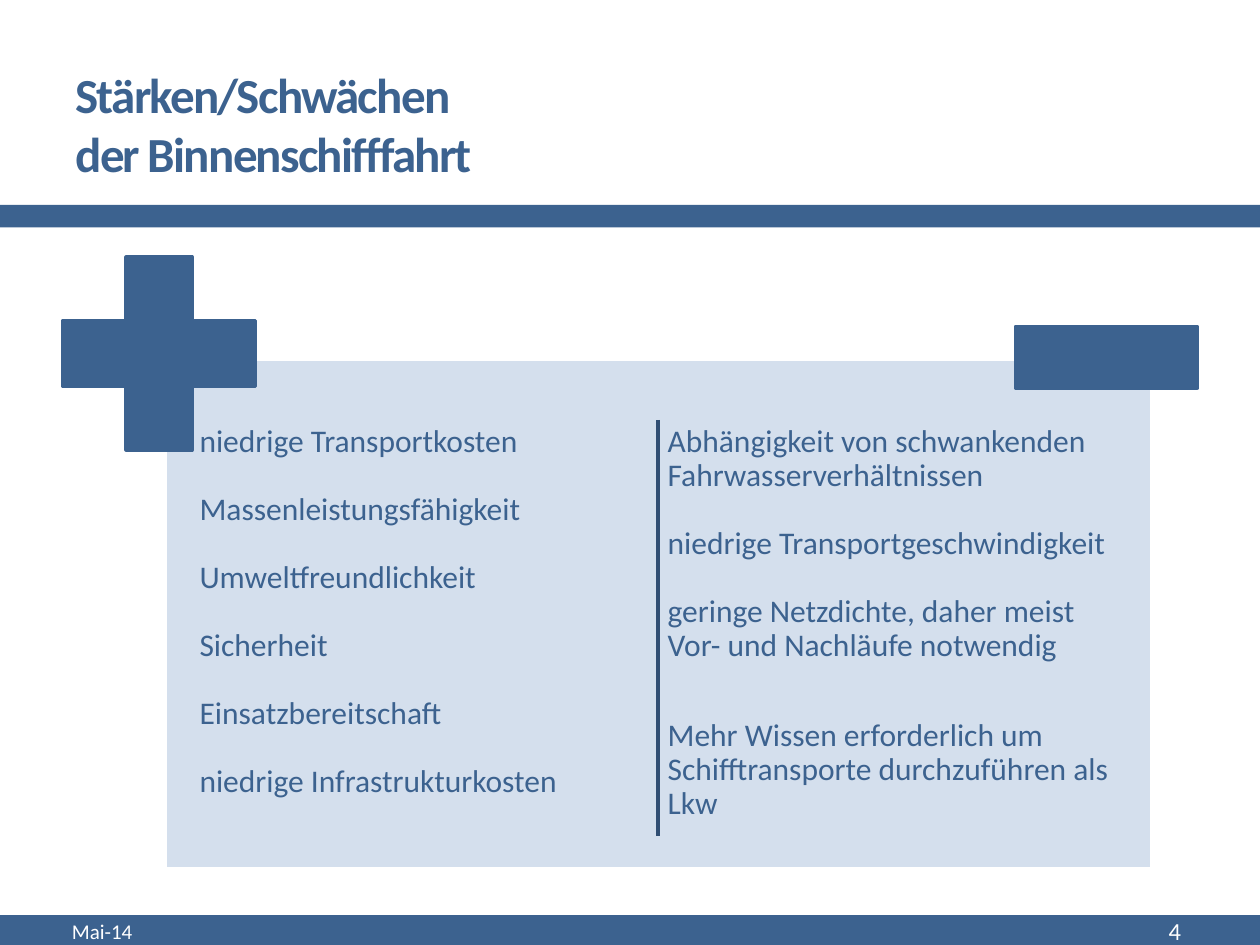
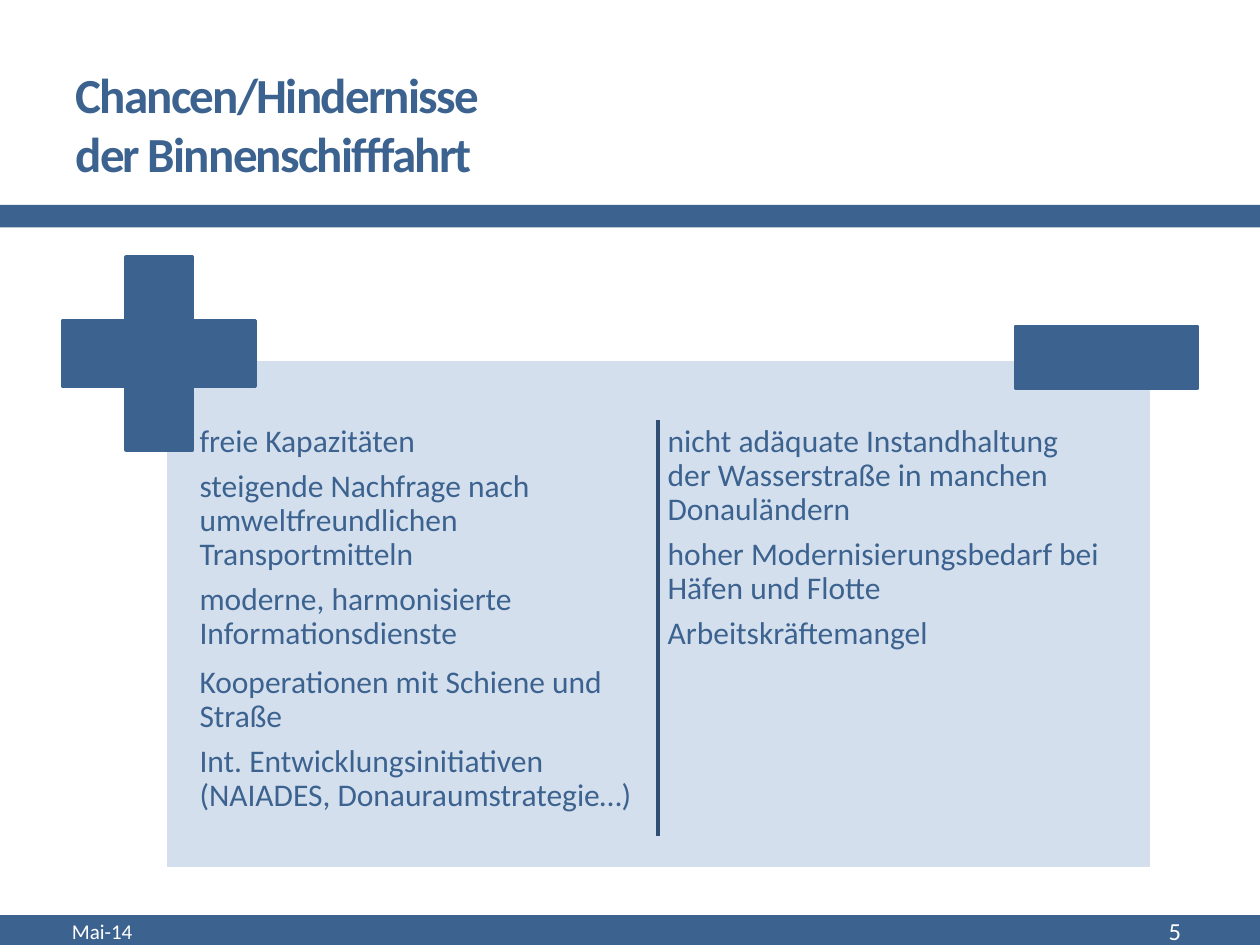
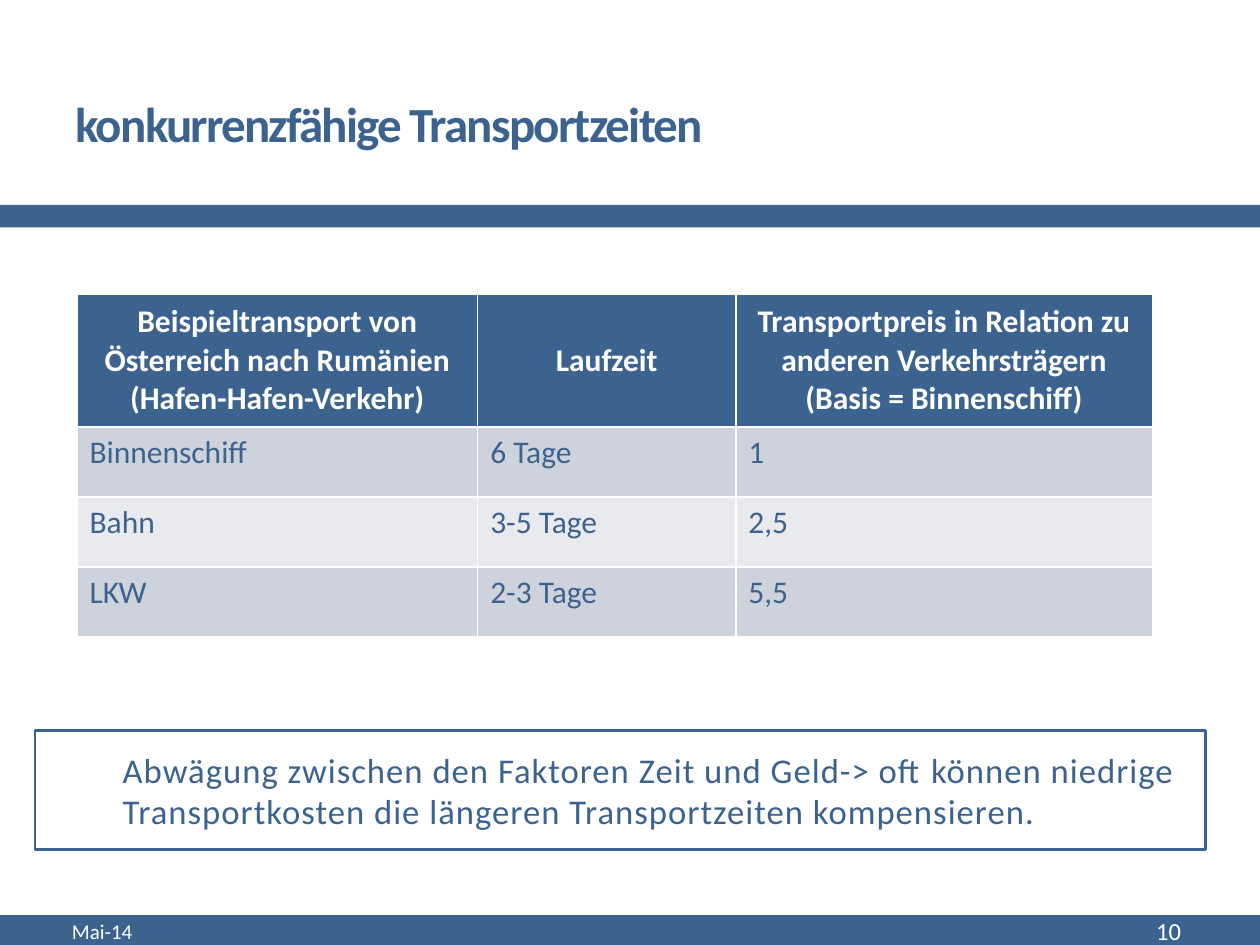
import pptx
import pptx.dml.color
import pptx.enum.shapes
import pptx.enum.text
import pptx.util
from lxml import etree

Pt = pptx.util.Pt
SHAPES = pptx.enum.shapes.MSO_SHAPE
ALIGN = pptx.enum.text.PP_ALIGN
ANCHOR = pptx.enum.text.MSO_ANCHOR

BLUE = "3C628F"
DARK_BLUE = "304E73"
PALE_BLUE = "D4DFED"
WHITE = "FFFFFF"
ROW_FILLS = ("CED3DB", "E8EAEE")
BLANK_LINE = 19.4
SMALL_GAP = 6.3


def color(value):
    return pptx.dml.color.RGBColor.from_string(value)


class Deck:
    font_name = "Calibri"
    width, height = 720, 540

    def __init__(self):
        self.presentation = pptx.Presentation()
        self.presentation.slide_width = Pt(self.width)
        self.presentation.slide_height = Pt(self.height)
        self.slide = None

    def format_text(self, text_frame, size, text_color, bold=False, align=ALIGN.LEFT, spacing=0):
        for paragraph in text_frame.paragraphs:
            paragraph.alignment = align
            for run in paragraph.runs:
                run.font.name = self.font_name
                run.font.size = Pt(size)
                run.font.bold = bold
                run.font.color.rgb = color(text_color)
                if spacing:
                    run.font._element.set("spc", str(round(spacing * 100)))

    def add_slide(self, title, number):
        self.slide = self.presentation.slides.add_slide(self.presentation.slide_layouts[5])
        self.rectangle(0, 117, self.width, 13, BLUE)
        self.rectangle(0, 523, self.width, 17, BLUE)
        self.title(title)
        self.footer_text(34, 228, "Mai-14", 12, ALIGN.LEFT)
        self.footer_text(598, 84, str(number), 14, ALIGN.RIGHT)

    def title(self, text):
        shape = self.slide.shapes.title
        shape.left, shape.top, shape.width, shape.height = map(Pt, (36, 31.5, 375, 78))
        text_frame = shape.text_frame
        text_frame.text = text
        text_frame.auto_size = pptx.enum.text.MSO_AUTO_SIZE.NONE
        text_frame.vertical_anchor = ANCHOR.MIDDLE
        self.format_text(text_frame, 28, BLUE, bold=True, spacing=-1)

    def text_box(self, left, top, width, height):
        text_frame = self.slide.shapes.add_textbox(*map(Pt, (left, top, width, height))).text_frame
        text_frame.word_wrap = True
        return text_frame

    def footer_text(self, left, width, text, size, align):
        text_frame = self.text_box(left, 519, width, 26)
        text_frame.text = text
        text_frame.vertical_anchor = ANCHOR.MIDDLE
        self.format_text(text_frame, size, WHITE, align=align)

    def rectangle(self, left, top, width, height, fill=None, line=None, line_width=2, kind=SHAPES.RECTANGLE):
        shape = self.slide.shapes.add_shape(kind, *map(Pt, (left, top, width, height)))
        shape.shadow.inherit = False
        if fill:
            shape.fill.solid()
            shape.fill.fore_color.rgb = color(fill)
        else:
            shape.fill.background()
        if line:
            shape.line.color.rgb = color(line)
            shape.line.width = Pt(line_width)
        else:
            shape.line.fill.background()
        return shape

    def vertical_line(self, x, top, bottom):
        connector = self.slide.shapes.add_connector(
            pptx.enum.shapes.MSO_CONNECTOR.STRAIGHT, *map(Pt, (x, top, x, bottom)))
        connector.line.color.rgb = color(DARK_BLUE)
        connector.line.width = Pt(2)
        etree.SubElement(connector._element.spPr, pptx.oxml.ns.qn("a:effectLst"))

    def argument_column(self, left, arguments):
        text_frame = self.text_box(left, 240, 262, 249)
        text_frame.margin_left = text_frame.margin_right = Pt(3)
        text_frame.margin_top = text_frame.margin_bottom = Pt(3)
        text_frame.text = "\n".join(text for gap, text in arguments)
        for paragraph, (gap, text) in zip(text_frame.paragraphs, arguments):
            paragraph.line_spacing = 0.9
            paragraph.space_before = Pt(gap)
        self.format_text(text_frame, 18, BLUE)

    def plus_minus_panel(self, strengths, weaknesses):
        self.rectangle(94.5, 205.5, 563.5, 291, PALE_BLUE, WHITE)
        self.argument_column(111, strengths)
        self.argument_column(378.5, weaknesses)
        plus = self.rectangle(36, 147, 110, 110, BLUE, BLUE, kind=SHAPES.CROSS)
        plus.adjustments[0] = 0.328
        self.rectangle(580.5, 186.5, 103.5, 35.5, BLUE, BLUE)
        self.vertical_line(376, 240, 478)

    def table(self, left, top, column_widths, row_heights, rows):
        table = self.slide.shapes.add_table(
            len(rows), len(column_widths), Pt(left), Pt(top),
            Pt(sum(column_widths)), Pt(sum(row_heights))).table
        for column, width in zip(table.columns, column_widths):
            column.width = Pt(width)
        for index, (row, height, texts) in enumerate(zip(table.rows, row_heights, rows)):
            row.height = Pt(height)
            header = index == 0
            for cell, text in zip(row.cells, texts):
                cell.text_frame.text = text
                cell.fill.solid()
                cell.fill.fore_color.rgb = color(BLUE if header else ROW_FILLS[(index - 1) % 2])
                cell.vertical_anchor = ANCHOR.MIDDLE if header else ANCHOR.TOP
                self.format_text(cell.text_frame, 18, WHITE if header else BLUE, bold=header,
                                 align=ALIGN.CENTER if header else ALIGN.LEFT)

    def conclusion(self, text):
        text_frame = self.rectangle(20, 417.5, 669, 68, line=BLUE, line_width=1.5).text_frame
        text_frame.text = text
        text_frame.word_wrap = True
        text_frame.vertical_anchor = ANCHOR.MIDDLE
        self.format_text(text_frame, 19.8, BLUE, spacing=0.6)
        text_frame.paragraphs[0]._element.get_or_add_pPr().set("marL", str(Pt(43)))


def main():
    deck = Deck()

    deck.add_slide("Stärken/Schwächen\vder Binnenschifffahrt", 4)
    deck.plus_minus_panel(
        [(0, "niedrige Transportkosten"),
         (BLANK_LINE, "Massenleistungsfähigkeit"),
         (BLANK_LINE, "Umweltfreundlichkeit"),
         (BLANK_LINE, "Sicherheit"),
         (BLANK_LINE, "Einsatzbereitschaft"),
         (BLANK_LINE, "niedrige Infrastrukturkosten")],
        [(0, "Abhängigkeit von schwankenden Fahrwasserverhältnissen"),
         (BLANK_LINE, "niedrige Transportgeschwindigkeit"),
         (BLANK_LINE, "geringe Netzdichte, daher meist Vor- und Nachläufe notwendig"),
         (BLANK_LINE + 2 * SMALL_GAP, "Mehr Wissen erforderlich um Schifftransporte durchzuführen als Lkw")])

    deck.add_slide("Chancen/Hindernisse\vder Binnenschifffahrt", 5)
    deck.plus_minus_panel(
        [(0, "freie Kapazitäten"),
         (SMALL_GAP, "steigende Nachfrage nach umweltfreundlichen Transportmitteln"),
         (SMALL_GAP, "moderne, harmonisierte Informationsdienste"),
         (8.6, "Kooperationen mit Schiene und Straße"),
         (SMALL_GAP, "Int. Entwicklungsinitiativen (NAIADES, Donauraumstrategie…)")],
        [(0, "nicht adäquate Instandhaltung  der Wasserstraße in manchen Donauländern"),
         (SMALL_GAP, "hoher Modernisierungsbedarf bei Häfen und Flotte"),
         (SMALL_GAP, "Arbeitskräftemangel")])

    deck.add_slide("konkurrenzfähige Transportzeiten", 10)
    deck.table(44, 168, (229, 147.5, 238), (76, 40, 40, 40), [
        ("Beispieltransport von Österreich nach Rumänien\n(Hafen-Hafen-Verkehr)", "Laufzeit",
         "Transportpreis in Relation zu anderen Verkehrsträgern (Basis = Binnenschiff)"),
        ("Binnenschiff", "6 Tage", "1"),
        ("Bahn", "3-5 Tage", "2,5"),
        ("LKW", "2-3 Tage", "5,5")])
    deck.conclusion("Abwägung zwischen den Faktoren Zeit und Geld-> oft können niedrige "
                    "Transportkosten die längeren Transportzeiten kompensieren.")

    deck.presentation.save("out.pptx")


if __name__ == "__main__":
    main()
